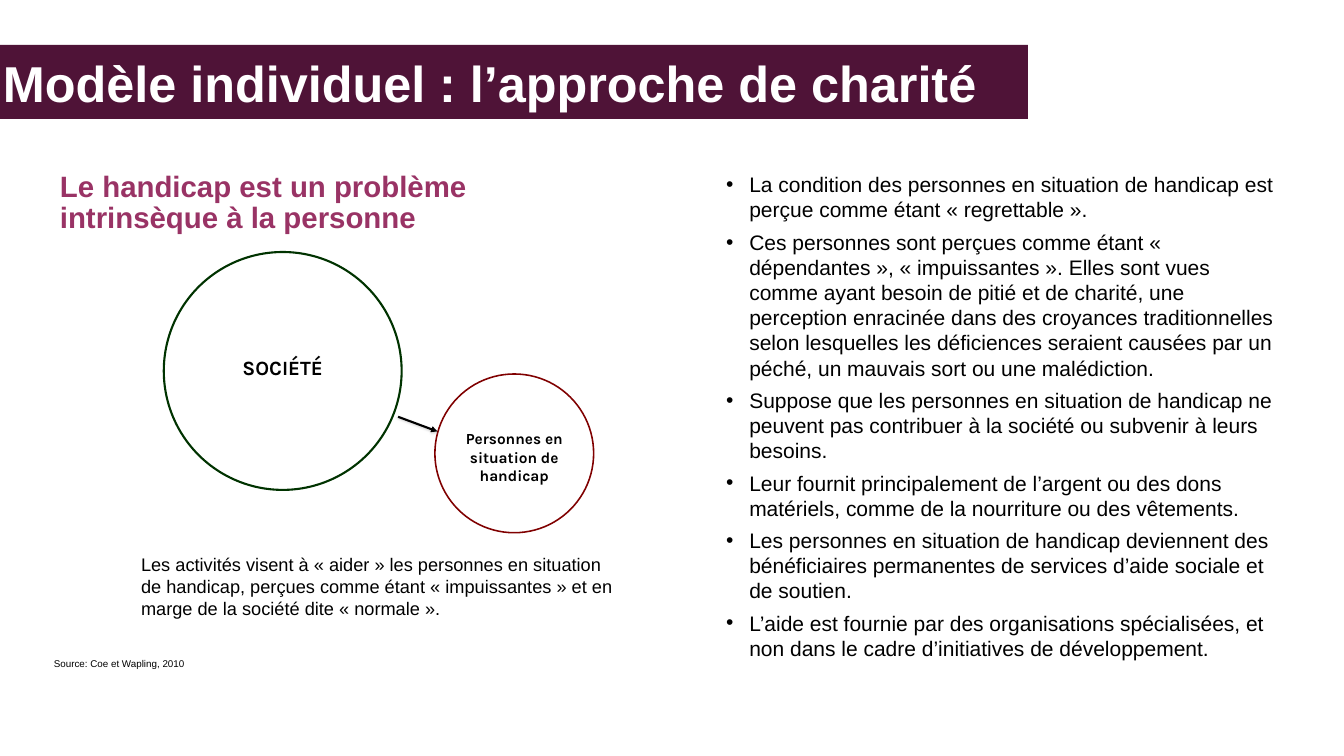
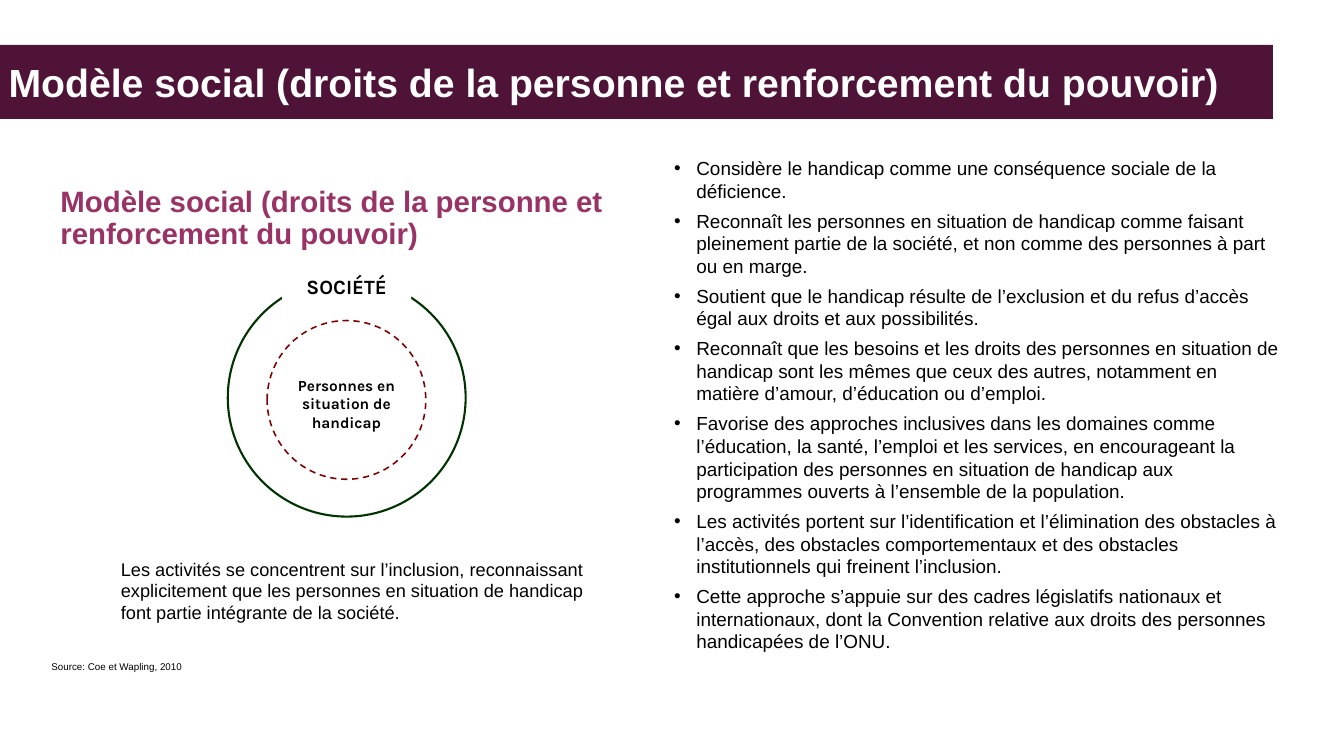
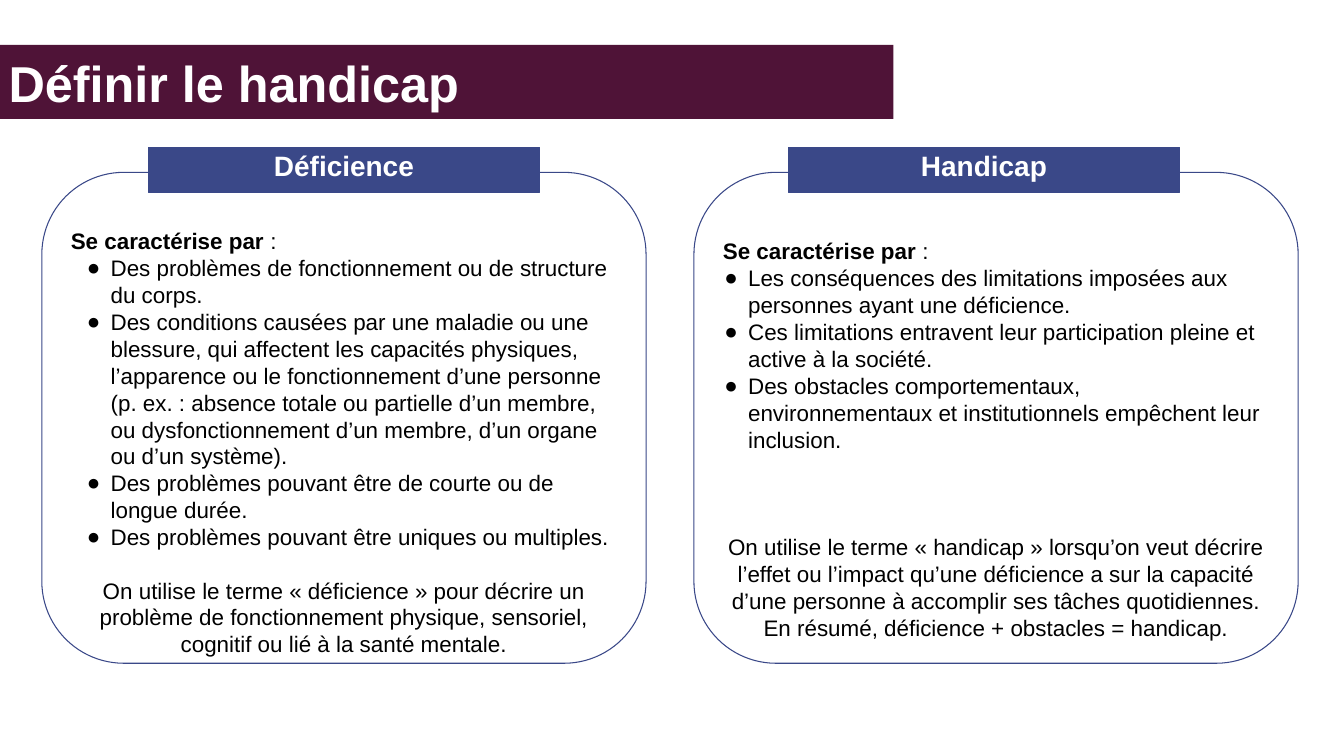
from lxml.etree import SubElement
from pptx import Presentation
from pptx.dml.color import RGBColor
from pptx.enum.dml import MSO_LINE_DASH_STYLE as Dash
from pptx.enum.shapes import MSO_CONNECTOR as Connector, MSO_SHAPE as Shape
from pptx.enum.text import MSO_ANCHOR as Anchor, MSO_AUTO_SIZE as AutoSize, PP_ALIGN as Align
from pptx.oxml.ns import qn
from pptx.util import Inches, Pt

BLACK, WHITE = "000000", "FFFFFF"
BAND, HEADING, PANEL = "4F1337", "993365", "3A4888"
SOCIETY, PEOPLE, SHADOW = "003300", "800000", "808080"
PLAIN = (0.1, 0.05, 0.1, 0.05)
EVEN = (0.1, 0.1, 0.1, 0.1)
CIRCLE, INNER_CIRCLE = 4.72, 3.15
SOURCE = "Source: Coe et Wapling, 2010"


def colour(value):
    return RGBColor.from_string(value)


def set_frame(shape, insets, anchor=Anchor.TOP):
    frame = shape.text_frame
    frame.word_wrap = True
    frame.vertical_anchor = anchor
    (frame.margin_left, frame.margin_top,
     frame.margin_right, frame.margin_bottom) = [Inches(inset) for inset in insets]
    return frame


def set_bullet(para, char, left, hanging):
    props = para._p.get_or_add_pPr()
    props.set("marL", str(Inches(left)))
    props.set("indent", str(-Inches(hanging)))
    tint = SubElement(props, qn("a:buClr"))
    SubElement(tint, qn("a:srgbClr"), val=BLACK)
    SubElement(props, qn("a:buFont"), typeface="Arial")
    SubElement(props, qn("a:buChar"), char=char)


def style(para, size, tint=BLACK, bold=False, name="Arial", align=Align.LEFT, spacing=None):
    para.alignment = align
    if spacing:
        para.line_spacing = spacing
    font = para.font
    font.name, font.size, font.bold = name, Pt(size), bold
    font.color.rgb = colour(tint)


def write(frame, text, size, **look):
    para = frame.paragraphs[0]
    para.text = text
    style(para, size, **look)


def add_text(page, box, text, size, anchor=Anchor.TOP, **look):
    shape = page.shapes.add_textbox(*[Inches(length) for length in box])
    frame = set_frame(shape, PLAIN, anchor)
    write(frame, text, size, **look)
    return frame


def add_figure(shapes, kind, box, fill=None, line=None, weight=1.5):
    shape = shapes.add_shape(kind, *[Inches(length) for length in box])
    shape.shadow.inherit = False
    if fill:
        shape.fill.solid()
        shape.fill.fore_color.rgb = colour(fill)
    else:
        shape.fill.background()
    if line:
        shape.line.color.rgb = colour(line)
        shape.line.width = Pt(weight)
    else:
        shape.line.fill.background()
    return shape


def add_title(page, text, width, size=72, inset=0.17):
    band = add_figure(page.shapes, Shape.RECTANGLE, (0, 0.89, width, 1.47), fill=BAND)
    frame = set_frame(band, (inset, 0.06, 0.06, 0.06), Anchor.MIDDLE)
    write(frame, text, size, tint=WHITE, bold=True)


def add_bullets(page, box, items, size, hanging):
    shape = page.shapes.add_textbox(*[Inches(length) for length in box])
    frame = set_frame(shape, PLAIN)
    for index, item in enumerate(items):
        para = frame.add_paragraph() if index else frame.paragraphs[0]
        para.text = item
        if index:
            para.space_before = Pt(10)
        set_bullet(para, "•", 0.5, hanging)
        style(para, size)


def add_circles(shapes, left, top, people_offset, label_offset, dash=None):
    add_figure(shapes, Shape.OVAL, (left, top, CIRCLE, CIRCLE), line=SOCIETY, weight=3)
    across, down = people_offset
    people = add_figure(shapes, Shape.OVAL, (left + across, top + down, INNER_CIRCLE, INNER_CIRCLE),
                        line=PEOPLE, weight=2.25)
    if dash:
        people.line.dash_style = dash
    write(set_frame(people, (0.1, 0.64, 0.1, 0.05)), "Personnes en situation de handicap", 22,
          bold=True, name="Karla", align=Align.CENTER)
    across, down = label_offset
    label = add_figure(shapes, Shape.RECTANGLE, (left + across, top + down, 2.56, 0.73), fill=WHITE)
    write(set_frame(label, PLAIN), "SOCIÉTÉ", 29, bold=True, name="Karla", align=Align.CENTER)


def add_arrow(shapes, left, top, right, bottom):
    arrow = shapes.add_connector(Connector.STRAIGHT, Inches(right), Inches(bottom),
                                 Inches(left), Inches(top))
    arrow.line.color.rgb = colour(BLACK)
    arrow.line.width = Pt(3)
    SubElement(arrow.line._get_or_add_ln(), qn("a:headEnd"), type="triangle")
    effects = SubElement(arrow._element.spPr, qn("a:effectLst"))
    shadow = SubElement(effects, qn("a:outerShdw"), blurRad=str(Pt(3.1)), dist=str(Pt(1.8)),
                        dir="5400000", rotWithShape="0")
    tint = SubElement(shadow, qn("a:srgbClr"), val=SHADOW)
    SubElement(tint, qn("a:alpha"), val="35000")


def add_heading(page, box, text):
    add_text(page, box, text, 42, tint=HEADING, bold=True, spacing=0.9)


def add_notes(page, summary_box, summary, source_left, source_top):
    frame = add_text(page, summary_box, summary, 26)
    frame.auto_size = AutoSize.SHAPE_TO_FIT_TEXT
    add_text(page, (source_left, source_top, 3.5, 0.37), SOURCE, 14, anchor=Anchor.MIDDLE)


def add_panel(page, left, title, items, closing, tab_offset, top_inset, indent, gap):
    panel = add_figure(page.shapes, Shape.ROUNDED_RECTANGLE, (left, 3.42, 11.99, 9.74), line=PANEL)
    panel.adjustments[0] = 0.167
    frame = set_frame(panel, (0.1, top_inset, 0.1, 0.1))
    lead = frame.paragraphs[0]
    for text, bold in (("Se caractérise par ", True), (":", False)):
        span = lead.add_run()
        span.text = text
        span.font.bold = bold
    style(lead, 32, spacing=0.9)
    for item in items:
        para = frame.add_paragraph()
        para.text = item
        set_bullet(para, "●", indent, 0.47)
        style(para, 32)
    para = frame.add_paragraph()
    para.text = closing
    para.space_before = Pt(gap)
    style(para, 32, align=Align.CENTER)

    tab = add_figure(page.shapes, Shape.RECTANGLE, (left + tab_offset, 2.92, 7.77, 0.9),
                     fill=PANEL, line=PANEL)
    write(set_frame(tab, EVEN), title, 40, tint=WHITE, bold=True, align=Align.CENTER, spacing=0.9)


def build_charity(page):
    add_heading(page, (1.09, 3.36, 11.45, 0.73), "Le handicap est un problème intrinsèque à la personne")
    add_bullets(page, (14.27, 3.36, 11.18, 7.76), [
        "La condition des personnes en situation de handicap est perçue comme étant « regrettable ».",
        "Ces personnes sont perçues comme étant « dépendantes », « impuissantes ». Elles sont vues "
        "comme ayant besoin de pitié et de charité, une perception enracinée dans des croyances "
        "traditionnelles selon lesquelles les déficiences seraient causées par un péché, "
        "un mauvais sort ou une malédiction.",
        "Suppose que les personnes en situation de handicap ne peuvent pas contribuer à la société "
        "ou subvenir à leurs besoins.",
        "Leur fournit principalement de l’argent ou des dons matériels, comme de la nourriture "
        "ou des vêtements.",
        "Les personnes en situation de handicap deviennent des bénéficiaires permanentes de services "
        "d’aide sociale et de soutien.",
        "L’aide est fournie par des organisations spécialisées, et non dans le cadre d’initiatives "
        "de développement.",
    ], 30, 0.46)
    add_notes(page, (2.7, 10.93, 9.57, 1.41),
              "Les activités visent à « aider » les personnes en situation de handicap, perçues comme "
              "étant « impuissantes » et en marge de la société dite « normale ».", 0.97, 12.98)
    add_title(page, "Modèle individuel : l’approche de charité", 20.4, inset=0.06)
    diagram = page.shapes.add_group_shape().shapes
    add_circles(diagram, 3.25, 5, (5.38, 2.42), (1.08, 1.99))
    add_arrow(diagram, 7.9, 8.27, 8.68, 8.56)


def build_social(page):
    title = "Modèle social (droits de la personne et renforcement du pouvoir)"
    add_heading(page, (1.1, 3.66, 13.05, 0.71), title)
    add_bullets(page, (13.22, 3.06, 12.35, 9.75), [
        "Considère le handicap comme une conséquence sociale de la déficience.",
        "Reconnaît les personnes en situation de handicap comme faisant pleinement partie de la "
        "société, et non comme des personnes à part ou en marge.",
        "Soutient que le handicap résulte de l’exclusion et du refus d’accès égal aux droits "
        "et aux possibilités.",
        "Reconnaît que les besoins et les droits des personnes en situation de handicap sont les "
        "mêmes que ceux des autres, notamment en matière d’amour, d’éducation ou d’emploi.",
        "Favorise des approches inclusives dans les domaines comme l’éducation, la santé, l’emploi "
        "et les services, en encourageant la participation des personnes en situation de handicap "
        "aux programmes ouverts à l’ensemble de la population.",
        "Les activités portent sur l’identification et l’élimination des obstacles à l’accès, des "
        "obstacles comportementaux et des obstacles institutionnels qui freinent l’inclusion.",
        "Cette approche s’appuie sur des cadres législatifs nationaux et internationaux, dont la "
        "Convention relative aux droits des personnes handicapées de l’ONU.",
    ], 27, 0.44)
    add_circles(page.shapes, 4.52, 5.53, (0.78, 0.83), (1.08, -0.13), Dash.DASH)
    add_notes(page, (2.3, 11.02, 10, 1.41),
              "Les activités se concentrent sur l’inclusion, reconnaissant explicitement que les "
              "personnes en situation de handicap font partie intégrante de la société.", 0.92, 13.05)
    add_title(page, title, 25.26, size=56)


def build_definitions(page):
    add_panel(page, 0.83, "Déficience", [
        "Des problèmes de fonctionnement ou de structure du corps.",
        "Des conditions causées par une maladie ou une blessure, qui affectent les capacités "
        "physiques, l’apparence ou le fonctionnement d’une personne (p. ex. : absence totale ou "
        "partielle d’un membre, ou dysfonctionnement d’un membre, d’un organe ou d’un système).",
        "Des problèmes pouvant être de courte ou de longue durée.",
        "Des problèmes pouvant être uniques ou multiples.",
    ], "On utilise le terme « déficience » pour décrire un problème de fonctionnement physique, "
       "sensoriel, cognitif ou lié à la santé mentale.",
        tab_offset=2.11, top_inset=0.67, indent=0.79, gap=38)
    add_panel(page, 13.77, "Handicap", [
        "Les conséquences des limitations imposées aux personnes ayant une déficience.",
        "Ces limitations entravent leur participation pleine et active à la société.",
        "Des obstacles comportementaux, environnementaux et institutionnels empêchent leur inclusion.",
    ], "On utilise le terme « handicap » lorsqu’on veut décrire l’effet ou l’impact qu’une déficience "
       "a sur la capacité d’une personne à accomplir ses tâches quotidiennes. "
       "En résumé, déficience + obstacles = handicap.",
        tab_offset=1.87, top_inset=0.87, indent=0.5, gap=115)
    add_title(page, "Définir le handicap", 17.73)


def main():
    deck = Presentation()
    deck.slide_width, deck.slide_height = Inches(26.67), Inches(15)
    for build in (build_charity, build_social, build_definitions):
        build(deck.slides.add_slide(deck.slide_layouts[6]))
    deck.save("out.pptx")


if __name__ == "__main__":
    main()
